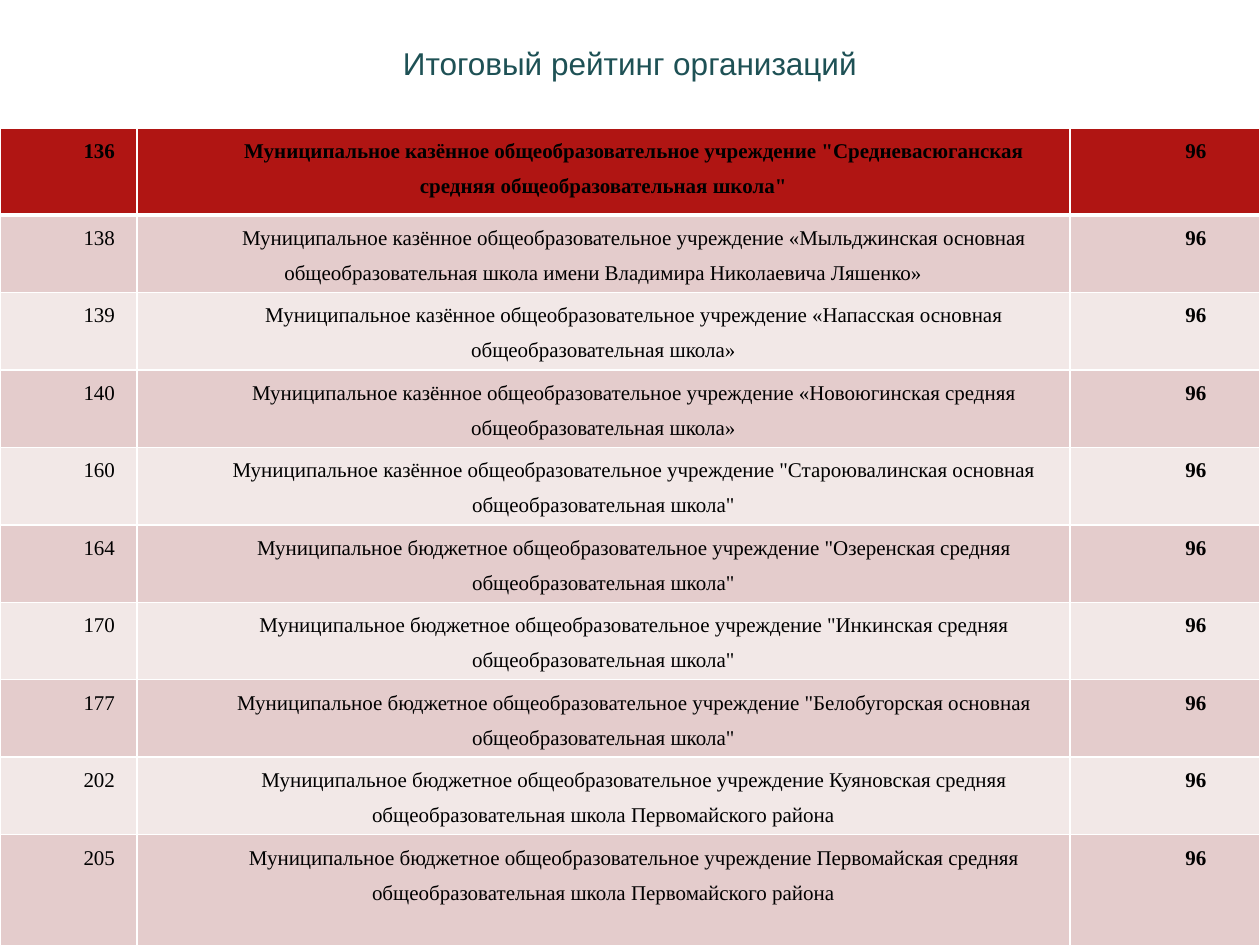
"""Build a slide with the final rating table of educational organisations."""
from lxml.etree import SubElement
from pptx import Presentation
from pptx.dml.color import RGBColor
from pptx.enum.text import MSO_ANCHOR as Anchor, PP_ALIGN as Align
from pptx.oxml.ns import qn
from pptx.util import Pt

TITLE_COLOR = RGBColor(0x1E, 0x51, 0x55)
HEADER_FILL = RGBColor(0xB0, 0x15, 0x13)
BAND_FILLS = (RGBColor(0xF2, 0xE8, 0xE7), RGBColor(0xE4, 0xCC, 0xCC))
BLACK = RGBColor(0x00, 0x00, 0x00)
WHITE = RGBColor(0xFF, 0xFF, 0xFF)

COLUMN_WIDTHS = (78.2, 533.3, 108.5)
HEADER_HEIGHT, ROW_HEIGHT, LAST_HEIGHT = 49.4, 44.3, 74.2
FIRST_LINE_INDENT = 35.3
STATE = "Муниципальное казённое общеобразовательное учреждение"
BUDGET = "Муниципальное бюджетное общеобразовательное учреждение"
SCORE = "96"
SCHOOLS = (
    ("136", f'{STATE} "Средневасюганская средняя общеобразовательная школа"'),
    ("138", f"{STATE} «Мыльджинская основная общеобразовательная школа "
            "имени Владимира Николаевича Ляшенко»"),
    ("139", f"{STATE} «Напасская основная общеобразовательная школа»"),
    ("140", f"{STATE} «Новоюгинская средняя общеобразовательная школа»"),
    ("160", f'{STATE} "Староювалинская основная общеобразовательная школа"'),
    ("164", f'{BUDGET} "Озеренская средняя общеобразовательная школа"'),
    ("170", f'{BUDGET} "Инкинская средняя общеобразовательная школа"'),
    ("177", f'{BUDGET} "Белобугорская основная общеобразовательная школа"'),
    ("202", f"{BUDGET} Куяновская средняя общеобразовательная школа "
            "Первомайского района"),
    ("205", f"{BUDGET} Первомайская средняя общеобразовательная школа "
            "Первомайского района"),
)


def style_font(para, name, size, color, bold=False):
    """Set the font of a whole paragraph."""
    para.font.name = name
    para.font.size = Pt(size)
    para.font.color.rgb = color
    para.font.bold = bold


def add_title(page, text):
    """Add the centred slide title."""
    box = page.shapes.add_textbox(Pt(36), Pt(21.6), Pt(648), Pt(90))
    frame = box.text_frame
    frame.word_wrap = True
    frame.vertical_anchor = Anchor.TOP
    para = frame.paragraphs[0]
    para.text = text
    para.alignment = Align.CENTER
    style_font(para, "Arial", 18, TITLE_COLOR)


def set_borders(cell, top, bottom):
    """Draw white cell borders, with given top and bottom widths."""
    properties = cell._tc.get_or_add_tcPr()
    for side, width in (("L", 1), ("R", 1), ("T", top), ("B", bottom)):
        line = SubElement(properties, qn(f"a:ln{side}"), w=str(Pt(width)))
        fill = SubElement(line, qn("a:solidFill"))
        SubElement(fill, qn("a:srgbClr"), val=str(WHITE))


def fill_cell(cell, text, fill, bold):
    """Write one cell's text and set its fill."""
    cell.fill.solid()
    cell.fill.fore_color.rgb = fill
    cell.margin_left = cell.margin_right = Pt(5)
    cell.margin_top = cell.margin_bottom = Pt(0)
    para = cell.text_frame.paragraphs[0]
    para.text = text
    para.alignment = Align.CENTER
    para.line_spacing = 1.5
    para._p.get_or_add_pPr().set("indent", str(Pt(FIRST_LINE_INDENT)))
    style_font(para, "Times New Roman", 12, BLACK, bold)


def add_rating_table(page):
    """Add the table of ranks, schools and scores."""
    middle_count = len(SCHOOLS) - 2
    heights = [HEADER_HEIGHT] + [ROW_HEIGHT] * middle_count + [LAST_HEIGHT]
    table = page.shapes.add_table(
        len(SCHOOLS), len(COLUMN_WIDTHS), Pt(0), Pt(73.4),
        Pt(sum(COLUMN_WIDTHS)), Pt(sum(heights))).table
    for column, width in zip(table.columns, COLUMN_WIDTHS):
        column.width = Pt(width)
    for index, (school, height) in enumerate(zip(SCHOOLS, heights)):
        table.rows[index].height = Pt(height)
        fill = BAND_FILLS[index % 2] if index else HEADER_FILL
        for position, text in enumerate((*school, SCORE)):
            cell = table.cell(index, position)
            set_borders(cell, 3 if index == 1 else 1, 1 if index else 3)
            fill_cell(cell, text, fill, index == 0 or position == 2)


def main():
    """Build and save the deck."""
    deck = Presentation()
    deck.slide_width, deck.slide_height = Pt(720), Pt(540)
    page = deck.slides.add_slide(deck.slide_layouts[6])
    add_title(page, "Итоговый рейтинг организаций")
    add_rating_table(page)
    deck.save("out.pptx")


if __name__ == "__main__":
    main()
